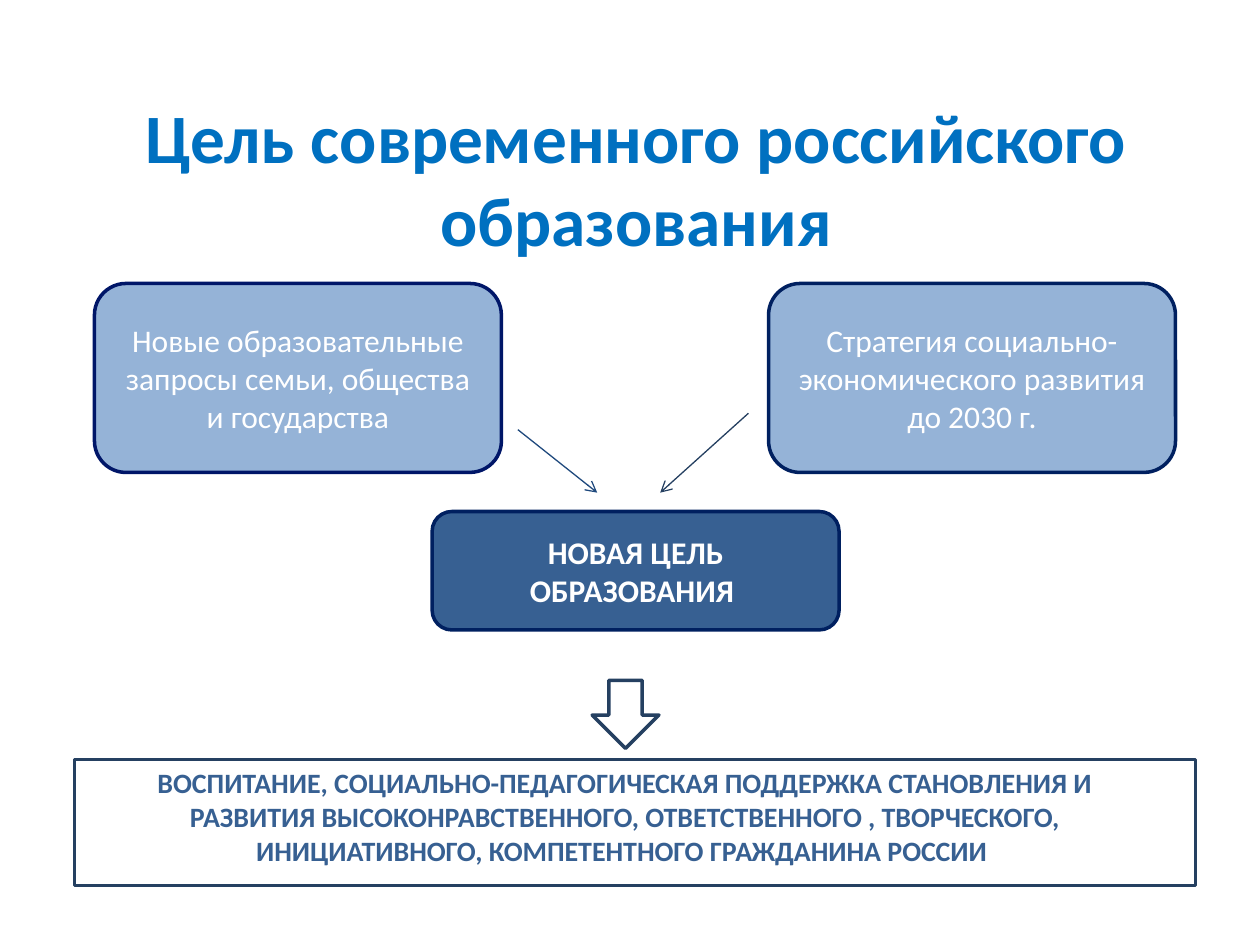
"""Builds a slide on the goal of modern Russian education as a converging diagram."""
from dataclasses import dataclass

from lxml.etree import SubElement
from pptx import Presentation
from pptx.dml.color import RGBColor as RGB
from pptx.enum.shapes import MSO_CONNECTOR as CONN, MSO_SHAPE as SHAPE
from pptx.enum.text import MSO_ANCHOR as ANCHOR, PP_ALIGN as ALIGN
from pptx.oxml.ns import qn
from pptx.util import Pt

PX = 9144


@dataclass(frozen=True)
class Theme:
    font: str = "Calibri"
    title: str = "0070C0"
    pale: str = "95B3D7"
    blue: str = "376092"
    navy: str = "002060"
    indigo: str = "001668"
    slate: str = "254061"
    arrow: str = "1F497D"
    white: str = "FFFFFF"
    title_size: float = 39.6
    box_size: int = 18
    goal_size: int = 16
    border: int = 2
    thin: float = 0.75


T = Theme()


def write(s, text, size, color, bold, anchor):
    tf = s.text_frame
    tf.word_wrap = True
    tf.vertical_anchor = anchor
    tf.text = text
    p = tf.paragraphs[0]
    p.alignment = ALIGN.CENTER
    f = p.runs[0].font
    f.name, f.size, f.bold = T.font, Pt(size), bold
    f.color.rgb = RGB.from_string(color)


def add_box(kind, box, fill, line):
    s = slide.shapes.add_shape(kind, *[v * PX for v in box])
    s.shadow.inherit = False
    if fill:
        s.fill.solid()
        s.fill.fore_color.rgb = RGB.from_string(fill)
    else:
        s.fill.background()
    s.line.color.rgb = RGB.from_string(line)
    s.line.width = Pt(T.border)
    return s


prs = Presentation()
prs.slide_width, prs.slide_height = 1000 * PX, 750 * PX
slide = prs.slides.add_slide(prs.slide_layouts[5])

title = slide.shapes.title
title.left, title.top, title.width, title.height = [v * PX for v in (55, 78, 900, 125)]
write(title, "Цель современного российского образования", T.title_size, T.title, True, ANCHOR.MIDDLE)

boxes = [
    ("Новые образовательные запросы семьи, общества и государства",
     (75, 225, 323, 150), T.pale, T.indigo, False),
    ("Стратегия социально-экономического развития до 2030 г.",
     (610, 225, 323, 150), T.pale, T.navy, False),
    ("НОВАЯ ЦЕЛЬ ОБРАЗОВАНИЯ ", (343, 406, 323, 94), T.blue, T.navy, True),
]
for text, box, fill, line, bold in boxes:
    s = add_box(SHAPE.ROUNDED_RECTANGLE, box, fill, line)
    write(s, text, T.box_size, T.white, bold, ANCHOR.MIDDLE)

arrows = [((411, 341, 474, 391), T.arrow), ((594, 328, 524, 391), T.slate)]
for ends, color in arrows:
    c = slide.shapes.add_connector(CONN.STRAIGHT, *[v * PX for v in ends])
    c.line.color.rgb = RGB.from_string(color)
    c.line.width = Pt(T.thin)
    SubElement(c.line._get_or_add_ln(), qn("a:tailEnd"), type="arrow")
    SubElement(c._element.spPr, qn("a:effectLst"))

add_box(SHAPE.RECTANGLE, (59, 603, 890, 100), None, T.slate)
goal = slide.shapes.add_textbox(*[v * PX for v in (67, 603, 858, 91)])
write(goal, "ВОСПИТАНИЕ, СОЦИАЛЬНО-ПЕДАГОГИЧЕСКАЯ ПОДДЕРЖКА СТАНОВЛЕНИЯ И РАЗВИТИЯ "
      "ВЫСОКОНРАВСТВЕННОГО, ОТВЕТСТВЕННОГО , ТВОРЧЕСКОГО, ИНИЦИАТИВНОГО, "
      "КОМПЕТЕНТНОГО ГРАЖДАНИНА РОССИИ ", T.goal_size, T.blue, True, ANCHOR.TOP)
add_box(SHAPE.DOWN_ARROW, (470, 540, 53, 54), None, T.slate)

prs.save("out.pptx")
